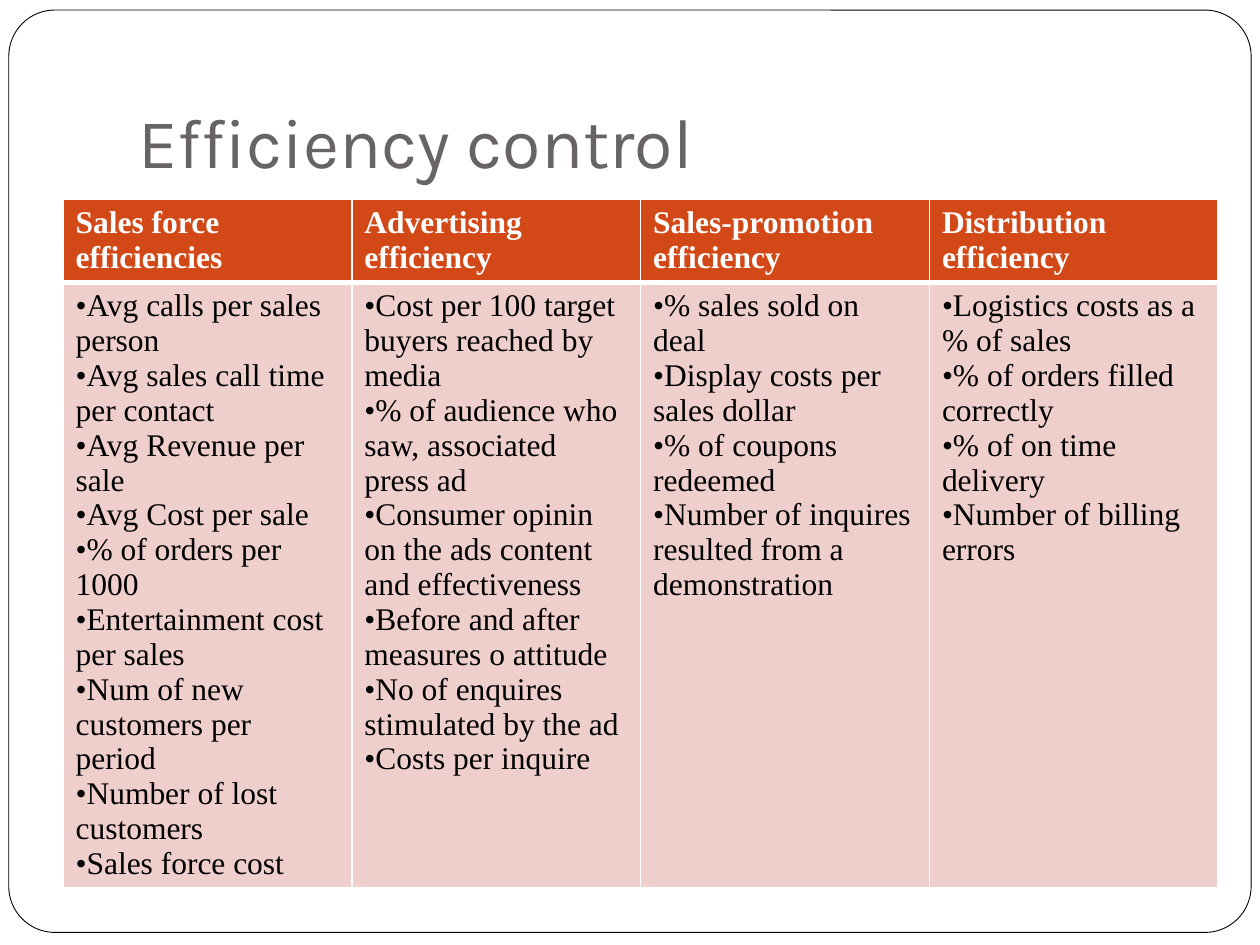
from dataclasses import dataclass

from lxml.etree import SubElement
from pptx import Presentation
from pptx.dml.color import RGBColor
from pptx.enum.shapes import MSO_SHAPE
from pptx.enum.text import MSO_ANCHOR, PP_ALIGN
from pptx.oxml.ns import qn
from pptx.util import Inches, Pt


@dataclass(frozen=True)
class Theme:
    white: str = "FFFFFF"
    black: str = "000000"
    title_gray: str = "696464"
    header_fill: str = "D34817"
    body_fill: str = "EFCFCC"
    title_font: str = "Karla"
    table_font: str = "Times New Roman"
    title_size: int = 40
    table_size: int = 18
    thin_line: int = 1
    thick_line: int = 3


THEME = Theme()

EFFICIENCIES = {
    "Sales force efficiencies": [
        "Avg calls per sales person",
        "Avg sales call time per contact",
        "Avg Revenue per sale",
        "Avg Cost per sale",
        "% of orders per 1000",
        "Entertainment cost per sales",
        "Num of new customers per period",
        "Number of lost customers",
        "Sales force cost",
    ],
    "Advertising efficiency": [
        "Cost per 100 target buyers reached by media",
        "% of audience who saw, associated press ad",
        "Consumer opinin on the ads content and effectiveness",
        "Before and after measures o attitude",
        "No of enquires stimulated by the ad",
        "Costs per inquire",
    ],
    "Sales-promotion efficiency": [
        "% sales sold on deal",
        "Display costs per sales dollar",
        "% of coupons redeemed",
        "Number of inquires resulted from a demonstration",
    ],
    "Distribution efficiency": [
        "Logistics costs as a % of sales",
        "% of orders filled correctly",
        "% of on time delivery",
        "Number of billing errors",
    ],
}


def write_text(text_frame, lines, *, font, size, color, bold=False, bullet=None):
    for index, line in enumerate(lines):
        paragraph = text_frame.paragraphs[0] if index == 0 else text_frame.add_paragraph()
        paragraph.alignment = PP_ALIGN.LEFT
        run = paragraph.add_run()
        run.text = line
        run.font.name = font
        run.font.size = Pt(size)
        run.font.bold = bold
        run.font.color.rgb = RGBColor.from_string(color)
        if bullet:
            properties = paragraph._p.get_or_add_pPr()
            SubElement(properties, qn("a:buFont"), typeface=font)
            SubElement(properties, qn("a:buChar"), char=bullet)


def set_borders(cell, color, **widths):
    properties = cell._tc.get_or_add_tcPr()
    for side in ("L", "R", "T", "B"):
        line = SubElement(properties, qn(f"a:ln{side}"), w=str(Pt(widths[side])))
        fill = SubElement(line, qn("a:solidFill"))
        SubElement(fill, qn("a:srgbClr"), val=color)


def format_cell(cell, fill, top, bottom):
    set_borders(cell, THEME.white, L=THEME.thin_line, R=THEME.thin_line, T=top, B=bottom)
    cell.fill.solid()
    cell.fill.fore_color.rgb = RGBColor.from_string(fill)


def add_title(slide, text):
    title = slide.shapes.title
    title.left, title.top = Inches(1), Inches(0.3)
    title.width, title.height = Inches(8.5), Inches(1.25)
    text_frame = title.text_frame
    text_frame.vertical_anchor = MSO_ANCHOR.BOTTOM
    text_frame.margin_left = text_frame.margin_right = Inches(0.1)
    text_frame.margin_top, text_frame.margin_bottom = Inches(0.05), Inches(0.1)
    write_text(text_frame, [text], font=THEME.title_font, size=THEME.title_size,
               color=THEME.title_gray)


def add_frame(slide):
    frame = slide.shapes.add_shape(MSO_SHAPE.ROUNDED_RECTANGLE, Inches(0.07), Inches(0.08),
                                   Inches(9.86), Inches(7.32))
    frame.adjustments[0] = 0.05
    frame.shadow.inherit = False
    frame.fill.solid()
    frame.fill.fore_color.rgb = RGBColor.from_string(THEME.white)
    frame.line.color.rgb = RGBColor.from_string(THEME.black)
    frame.line.width = Pt(0.5)
    slide.shapes.title._element.addprevious(frame._element)


def add_efficiency_table(slide, columns):
    header_height, body_height = Inches(0.66), Inches(4.8)
    table = slide.shapes.add_table(2, len(columns), Inches(0.5), Inches(1.58), Inches(9.17),
                                   header_height + body_height).table
    table.horz_banding = False
    table.rows[0].height, table.rows[1].height = header_height, body_height
    for index, (heading, measures) in enumerate(columns.items()):
        header, body = table.cell(0, index), table.cell(1, index)
        format_cell(header, THEME.header_fill, THEME.thin_line, THEME.thick_line)
        format_cell(body, THEME.body_fill, THEME.thick_line, THEME.thin_line)
        write_text(header.text_frame, [heading], font=THEME.table_font,
                   size=THEME.table_size, color=THEME.white, bold=True)
        write_text(body.text_frame, measures, font=THEME.table_font,
                   size=THEME.table_size, color=THEME.black, bullet="•")


def main():
    presentation = Presentation()
    presentation.slide_width, presentation.slide_height = Inches(10), Inches(7.5)
    slide = presentation.slides.add_slide(presentation.slide_layouts[5])
    add_frame(slide)
    add_title(slide, "Efficiency control")
    add_efficiency_table(slide, EFFICIENCIES)
    presentation.save("out.pptx")


if __name__ == "__main__":
    main()
